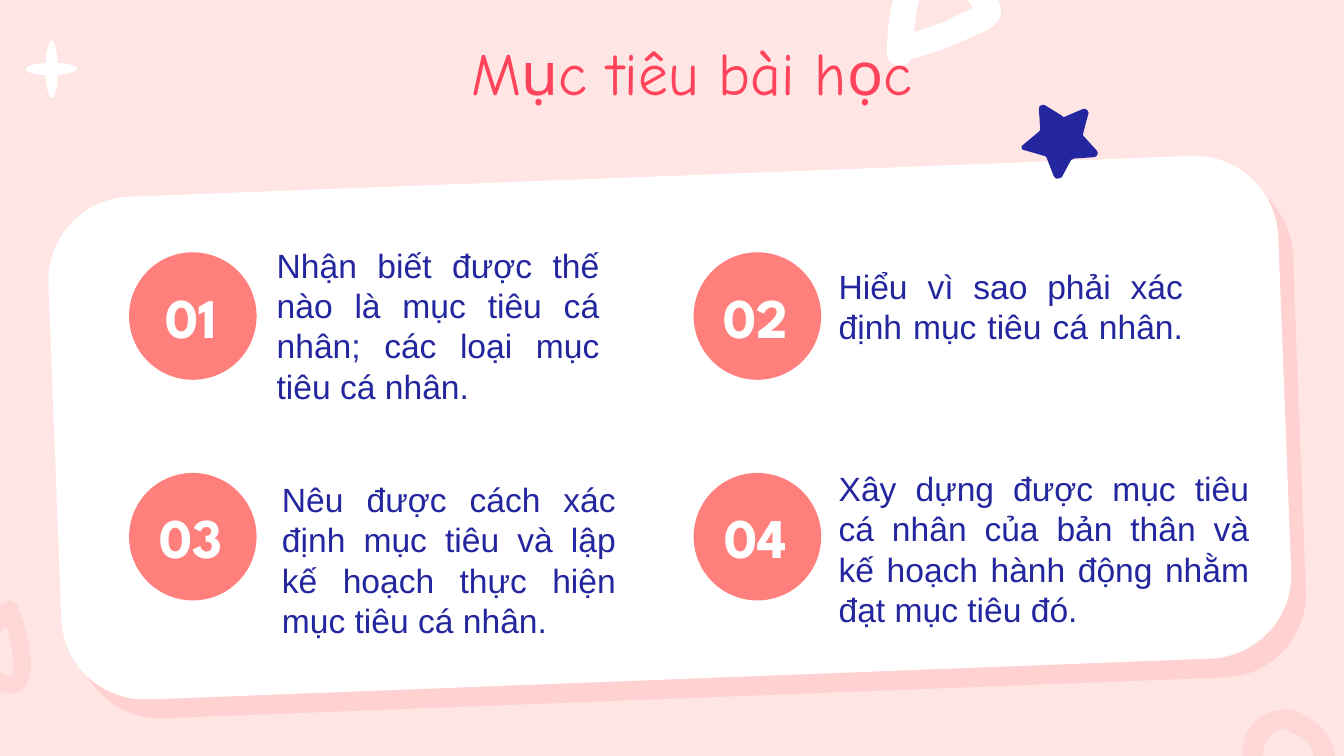
import pptx
import pptx.util
import pptx.dml.color
import pptx.enum.shapes
import pptx.enum.text
import pptx.oxml
import pptx.oxml.ns
from lxml import etree

Cm, Pt = pptx.util.Cm, pptx.util.Pt
RGB = pptx.dml.color.RGBColor
MSO_SHAPE = pptx.enum.shapes.MSO_SHAPE
ALIGN = pptx.enum.text.PP_ALIGN
ANCHOR = pptx.enum.text.MSO_ANCHOR
qn = pptx.oxml.ns.qn

BLUSH = RGB(0xFF, 0xE5, 0xE4)
PINK = RGB(0xFF, 0xD7, 0xD6)
CORAL = RGB(0xFF, 0x7F, 0x7D)
RED = RGB(0xFF, 0x43, 0x5B)
NAVY = RGB(0x23, 0x26, 0x9E)
WHITE = RGB(0xFF, 0xFF, 0xFF)

TITLE = "Mục tiêu bài học"
# Goal text, then left, top, width, height of its box in cm
GOALS = [
    ("Nhận biết được thế nào là mục tiêu cá nhân; các loại mục tiêu cá nhân. ",
     (4.98, 4.5, 6.6, 3.33)),
    ("Hiểu vì sao phải xác định mục tiêu cá nhân. ", (15.6, 4.9, 7.01, 1.8)),
    ("Nêu được cách xác định mục tiêu và lập kế hoạch thực hiện mục tiêu cá nhân. ",
     (5.08, 8.93, 6.81, 3.33)),
    ("Xây dựng được mục tiêu cá nhân của bản thân và kế hoạch hành động nhằm đạt mục tiêu đó. ",
     (15.6, 8.72, 8.26, 3.33)),
]
COLS, ROWS, DISC = (2.44, 13.11), (4.77, 8.94), 2.41

# Contours on a fine grid: a start point, then lines (x, y) or
# Bezier curves (two control points and an end point)
GRID = 0.0254
SPARKLE = [[
    (39, 30), (38, 30, 38, 30, 37, 31), (35, 36, 34, 42, 34, 47),
    (29, 47, 24, 48, 20, 50), (19, 51, 19, 52, 20, 53), (24, 55, 29, 56, 34, 56),
    (34, 62, 36, 72, 38, 73), (38, 73, 38, 73, 38, 73), (39, 73, 39, 73, 40, 72),
    (42, 67, 43, 61, 43, 56), (48, 55, 52, 55, 56, 53), (57, 52, 57, 52, 57, 52),
    (58, 51, 57, 51, 57, 50), (53, 48, 48, 47, 43, 47), (43, 42, 42, 36, 40, 31),
    (39, 30, 39, 30, 39, 30)]]
TOP_TRIANGLE = [
    [(696, -26), (697, -26, 697, -26, 697, -25), (701, -24, 705, -18, 707, -15),
     (711, -11, 715, -7, 718, -2), (720, 0, 723, 3, 724, 6), (724, 6, 723, 6, 723, 6),
     (720, 8, 718, 9, 715, 10), (710, 12, 706, 15, 701, 17), (694, 19, 687, 22, 680, 24),
     (681, 17, 681, 11, 683, 4), (685, -4, 687, -16, 693, -23), (694, -24, 695, -26, 696, -26)],
    [(696, -45), (683, -45, 674, -31, 670, -20), (663, -1, 660, 20, 660, 40),
     (660, 46, 665, 49, 670, 49), (673, 49, 676, 47, 678, 44), (693, 40, 707, 35, 722, 28),
     (728, 25, 739, 22, 743, 15), (748, 6, 742, -2, 737, -9), (732, -16, 726, -22, 721, -29),
     (715, -35, 710, -41, 702, -43), (700, -44, 698, -45, 696, -45)]]
CORNER_RING = [
    [(956, 542), (957, 542, 957, 542, 958, 543), (959, 544, 960, 546, 962, 546),
     (972, 548, 979, 557, 977, 567), (975, 575, 968, 581, 960, 581),
     (958, 581, 957, 581, 955, 580), (944, 577, 937, 565, 941, 554),
     (943, 548, 950, 542, 956, 542)],
    [(956, 528), (948, 528, 940, 531, 934, 537), (923, 548, 922, 565, 930, 579),
     (936, 589, 948, 596, 960, 596), (962, 596, 965, 596, 967, 596),
     (981, 593, 992, 580, 993, 566), (994, 553, 985, 540, 973, 534),
     (968, 530, 962, 528, 956, 528)]]
LEFT_TRIANGLE = [
    [(5, 466), (6, 471, 7, 475, 8, 480), (9, 486, 11, 494, 10, 500),
     (9, 501, 9, 503, 8, 503), (7, 503, 7, 503, 7, 503), (4, 503, 1, 500, -2, 499),
     (-6, 497, -9, 496, -13, 494), (-14, 493, -17, 492, -19, 491),
     (-19, 490, -18, 490, -18, 490), (-17, 488, -15, 486, -14, 485),
     (-12, 482, -9, 479, -7, 477), (-3, 473, 1, 470, 5, 466)],
    [(7, 447), (4, 447, 0, 449, 0, 453), (-8, 460, -16, 467, -23, 475),
     (-27, 479, -33, 484, -33, 490), (-34, 497, -28, 500, -23, 503),
     (-17, 506, -12, 509, -7, 511), (-2, 514, 3, 516, 8, 516), (8, 516, 9, 516, 9, 516),
     (21, 515, 24, 501, 23, 491), (22, 477, 18, 463, 13, 451), (11, 448, 9, 447, 7, 447)]]
STAR = [[
    (776, 78), (776, 78, 777, 78, 777, 78), (790, 86), (790, 87, 790, 87, 791, 87),
    (791, 87, 792, 87, 792, 87), (806, 81), (806, 81, 806, 81, 807, 81),
    (808, 81, 810, 82, 810, 84), (806, 99), (806, 99, 806, 100, 806, 101),
    (816, 112), (818, 114, 816, 117, 814, 117), (799, 118), (799, 118, 798, 119, 797, 119),
    (790, 132), (789, 133, 788, 133, 787, 133), (786, 133, 785, 133, 784, 131),
    (779, 118), (779, 117, 778, 116, 777, 116), (763, 112), (760, 112, 759, 109, 761, 108),
    (773, 98), (774, 98, 774, 96, 774, 96), (773, 81), (773, 79, 774, 78, 776, 78)]]


def paint(sp, color):
    sp.fill.solid()
    sp.fill.fore_color.rgb = color
    sp.line.fill.background()
    sp.shadow.inherit = False
    return sp


def add_shape(kind, box, color):
    return paint(s.shapes.add_shape(kind, *map(Cm, box)), color)


def add_doodle(contours, color):
    def emu(point):
        return [Cm(v * GRID) for v in point]

    fb = s.shapes.build_freeform(*emu(contours[0][0]))
    for i, (start, *segments) in enumerate(contours):
        if i:
            fb.move_to(*emu(start))
        fb.add_line_segments([emu(seg[-2:]) for seg in segments], close=True)
    sp = paint(fb.convert_to_shape(), color)

    # Bend the straight segments that have control points
    segments = [seg for contour in contours for seg in contour[1:]]
    lines = list(sp._element.iter(qn("a:lnTo")))
    for line, seg in zip(lines, segments):
        if len(seg) == 6:
            curve = etree.Element(qn("a:cubicBezTo"))
            for j in (0, 2, 4):
                x, y = emu(seg[j:j + 2])
                etree.SubElement(curve, qn("a:pt"), x=str(x - sp.left), y=str(y - sp.top))
            line.getparent().replace(line, curve)


def add_text(text, box, size, font, color, align, bold=False):
    tf = s.shapes.add_textbox(*map(Cm, box)).text_frame
    tf.word_wrap = True
    p = tf.paragraphs[0]
    p.alignment = align
    r = p.add_run()
    r.text = text
    r.font.size, r.font.name, r.font.bold = Pt(size), font, bold
    r.font.color.rgb = color
    return tf


prs = pptx.Presentation()
prs.slide_width, prs.slide_height = Cm(25.4), Cm(14.29)
s = prs.slides.add_slide(prs.slide_layouts[6])
s.background.fill.solid()
s.background.fill.fore_color.rgb = BLUSH

# Backdrop doodles
add_doodle(SPARKLE, WHITE)
add_doodle(TOP_TRIANGLE, WHITE)

# Tilted card with a hard shadow
card = add_shape(MSO_SHAPE.ROUNDED_RECTANGLE, (1.03, 3.33, 23.26, 9.51), WHITE)
card.rotation = 357.8
effects = card._element.spPr.find(qn("a:effectLst"))
effects.append(etree.fromstring(
    '<a:outerShdw xmlns:a="http://schemas.openxmlformats.org/drawingml/2006/main"'
    f' blurRad="0" dist="{Pt(12.8)}" dir="{52 * 60000}" algn="bl" rotWithShape="0">'
    f'<a:srgbClr val="{CORAL}"><a:alpha val="18000"/></a:srgbClr></a:outerShdw>'))

# Numbered goals, two by two
for i, (goal, box) in enumerate(GOALS):
    x, y = COLS[i % 2], ROWS[i // 2]
    add_shape(MSO_SHAPE.OVAL, (x, y, DISC, DISC), CORAL)
    tf = add_text(f"{i + 1:02}", (x - 0.03, y + 0.54, DISC, 1.32), 30, "League Spartan",
                  WHITE, ALIGN.CENTER, bold=True)
    tf.vertical_anchor = ANCHOR.MIDDLE
    tf.margin_left = tf.margin_right = tf.margin_top = tf.margin_bottom = Cm(0.25)
    tf.paragraphs[0].space_before = Pt(10)
    add_text(goal, box, 18, "Arial", NAVY, ALIGN.JUSTIFY)

# Front doodles and title
add_doodle(CORNER_RING, PINK)
add_doodle(LEFT_TRIANGLE, PINK)
add_doodle(STAR, NAVY)
add_text(TITLE, (4.09, 0.56, 17.98, 1.63), 32, "Comic Neue", RED, ALIGN.CENTER)

prs.save("out.pptx")
